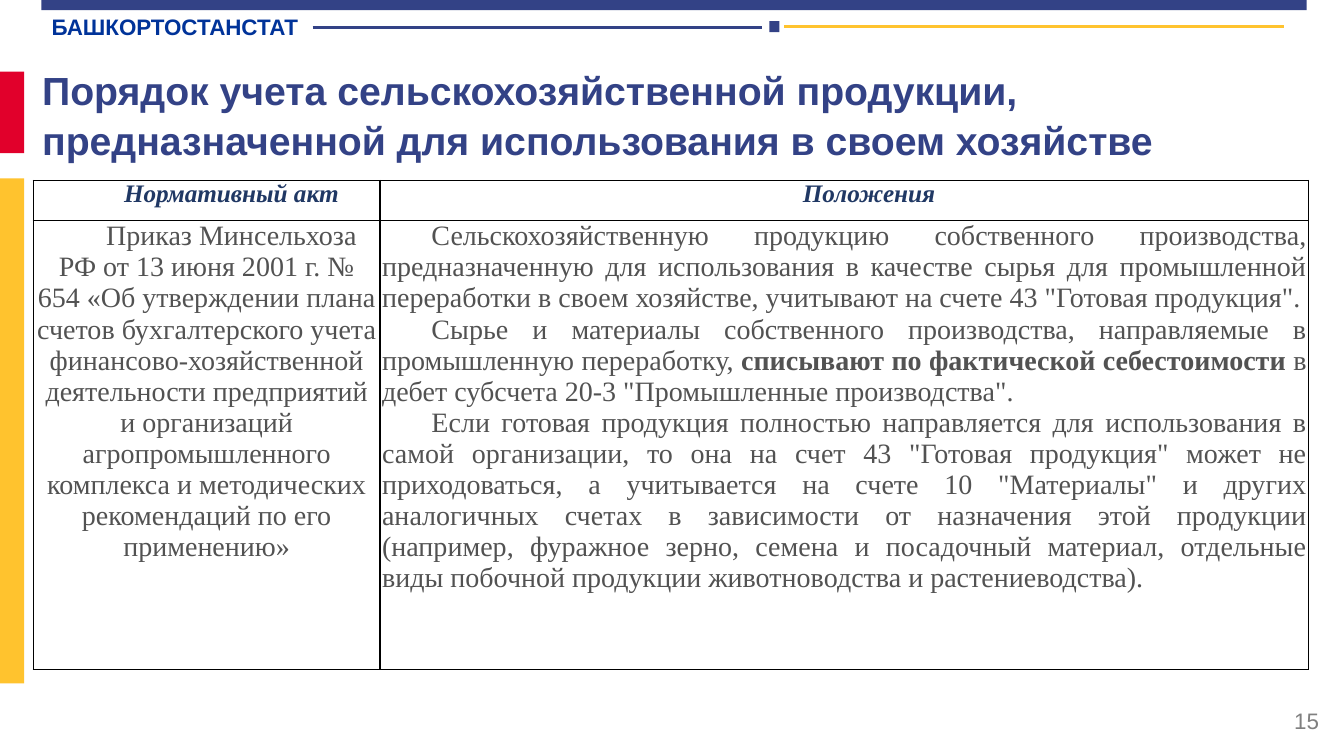
from lxml.etree import SubElement
from pptx import Presentation
from pptx.dml.color import RGBColor
from pptx.enum.shapes import MSO_CONNECTOR, MSO_SHAPE
from pptx.enum.text import MSO_ANCHOR, PP_ALIGN
from pptx.oxml.ns import qn
from pptx.util import Inches, Pt

BLUE = RGBColor(0x33, 0x42, 0x86)
RED = RGBColor(0xE1, 0x00, 0x2B)
YELLOW = RGBColor(0xFF, 0xC3, 0x2E)
AGENCY_BLUE = RGBColor(0x00, 0x33, 0x99)
HEADER_BLUE = RGBColor(0x20, 0x38, 0x64)
TEXT_GRAY = RGBColor(0x52, 0x52, 0x52)
NUMBER_GRAY = RGBColor(0x80, 0x80, 0x80)

TITLE = ("Порядок учета сельскохозяйственной продукции, "
         "предназначенной для использования в своем хозяйстве")
HEADERS = ["Нормативный акт", "Положения"]
ACT = ("Приказ Минсельхоза РФ от 13 июня 2001 г. № 654 «Об утверждении плана счетов "
       "бухгалтерского учета финансово-хозяйственной деятельности предприятий и организаций "
       "агропромышленного комплекса и методических рекомендаций по его применению»")
# Each provision is a list of runs; every second run is bold.
PROVISIONS = [
    ["Сельскохозяйственную продукцию собственного производства, предназначенную для "
     "использования в качестве сырья для промышленной переработки в своем хозяйстве, "
     "учитывают на счете 43 \"Готовая продукция\"."],
    ["Сырье и материалы собственного производства, направляемые в промышленную переработку, ",
     "списывают по фактической себестоимости",
     " в дебет субсчета 20-3 \"Промышленные производства\"."],
    ["Если готовая продукция полностью направляется для использования в самой организации, "
     "то она на счет 43 \"Готовая продукция\" может не приходоваться, а учитывается на счете 10 "
     "\"Материалы\" и других аналогичных счетах в зависимости от назначения этой продукции "
     "(например, фуражное зерно, семена и посадочный материал, отдельные виды побочной "
     "продукции животноводства и растениеводства)."],
]


def add_run(paragraph, text, size, color, font="Arial", bold=False, italic=False):
    run = paragraph.add_run()
    run.text = text
    run.font.name = font
    run.font.size = Pt(size)
    run.font.bold = bold
    run.font.italic = italic
    run.font.color.rgb = color


def add_text(slide, text, left, top, width, height, align=PP_ALIGN.LEFT,
             anchor=MSO_ANCHOR.MIDDLE, line_spacing=1.0, **font_format):
    box = slide.shapes.add_textbox(Inches(left), Inches(top), Inches(width), Inches(height))
    frame = box.text_frame
    frame.word_wrap = True
    frame.vertical_anchor = anchor
    paragraph = frame.paragraphs[0]
    paragraph.alignment = align
    paragraph.line_spacing = line_spacing
    add_run(paragraph, text, **font_format)


def add_block(slide, color, left, top, width, height):
    shape = slide.shapes.add_shape(MSO_SHAPE.RECTANGLE, Inches(left), Inches(top),
                                   Inches(width), Inches(height))
    shape.shadow.inherit = False
    shape.fill.solid()
    shape.fill.fore_color.rgb = color
    shape.line.fill.background()


def add_rule(slide, color, left, right, y):
    rule = slide.shapes.add_connector(MSO_CONNECTOR.STRAIGHT, Inches(left), Inches(y),
                                      Inches(right), Inches(y))
    rule.line.color.rgb = color
    rule.line.width = Pt(2)
    SubElement(rule._element.spPr, qn("a:effectLst"))


def set_borders(cell):
    """Draw a thin black border on all four sides, placed ahead of the cell's fill."""
    properties = cell._tc.get_or_add_tcPr()
    for position, side in enumerate(("a:lnL", "a:lnR", "a:lnT", "a:lnB")):
        line = SubElement(properties, qn(side), w=str(Pt(1)))
        fill = SubElement(line, qn("a:solidFill"))
        SubElement(fill, qn("a:srgbClr"), val="000000")
        properties.insert(position, line)


def fill_cell(cell, paragraphs, align, **font_format):
    """Write paragraphs, each a list of runs that alternate regular and bold."""
    cell.margin_left = cell.margin_right = Inches(0.02)
    cell.margin_top = cell.margin_bottom = 0
    cell.fill.background()
    set_borders(cell)
    frame = cell.text_frame
    for index, runs in enumerate(paragraphs):
        paragraph = frame.add_paragraph() if index else frame.paragraphs[0]
        paragraph.alignment = align
        paragraph._p.get_or_add_pPr().set("indent", str(Inches(0.49)))
        for position, text in enumerate(runs):
            run_format = {"bold": position % 2 == 1, **font_format}
            add_run(paragraph, text, font="Times New Roman", **run_format)


def add_provisions_table(slide):
    frame = slide.shapes.add_table(2, 2, Inches(0.33), Inches(1.79), Inches(12.65), Inches(4.85))
    table = frame.table
    table.first_row = table.horz_banding = False
    for column, width in zip(table.columns, (3.44, 9.21)):
        column.width = Inches(width)
    for row, height in zip(table.rows, (0.4, 4.45)):
        row.height = Inches(height)
    for index, header in enumerate(HEADERS):
        fill_cell(table.cell(0, index), [[header]], PP_ALIGN.CENTER,
                  size=18, color=HEADER_BLUE, bold=True, italic=True)
    fill_cell(table.cell(1, 0), [[ACT]], PP_ALIGN.CENTER, size=20, color=TEXT_GRAY)
    fill_cell(table.cell(1, 1), PROVISIONS, PP_ALIGN.JUSTIFY, size=20, color=TEXT_GRAY)


def add_header(slide):
    add_block(slide, BLUE, 0.41, 0, 12.55, 0.1)
    add_text(slide, "БАШКОРТОСТАНСТАТ", 0.38, 0.11, 2.71, 0.31, align=PP_ALIGN.CENTER,
             size=16, color=AGENCY_BLUE, bold=True)
    add_rule(slide, BLUE, 3.1, 7.56, 0.27)
    add_block(slide, BLUE, 7.63, 0.21, 0.1, 0.11)
    add_rule(slide, YELLOW, 7.78, 12.73, 0.26)


def main():
    presentation = Presentation()
    presentation.slide_width = Inches(13.33)
    presentation.slide_height = Inches(7.5)
    slide = presentation.slides.add_slide(presentation.slide_layouts[6])
    add_block(slide, RED, 0, 0.71, 0.24, 0.81)
    add_block(slide, YELLOW, 0, 1.77, 0.24, 5.01)
    add_text(slide, TITLE, 0.32, 0.59, 12.66, 1.02, anchor=MSO_ANCHOR.TOP,
             line_spacing=1.05, size=28, color=BLUE, bold=True)
    add_provisions_table(slide)
    add_header(slide)
    add_text(slide, "15", 10.18, 6.95, 3, 0.4, align=PP_ALIGN.RIGHT, size=16, color=NUMBER_GRAY)
    presentation.save("out.pptx")


if __name__ == "__main__":
    main()
